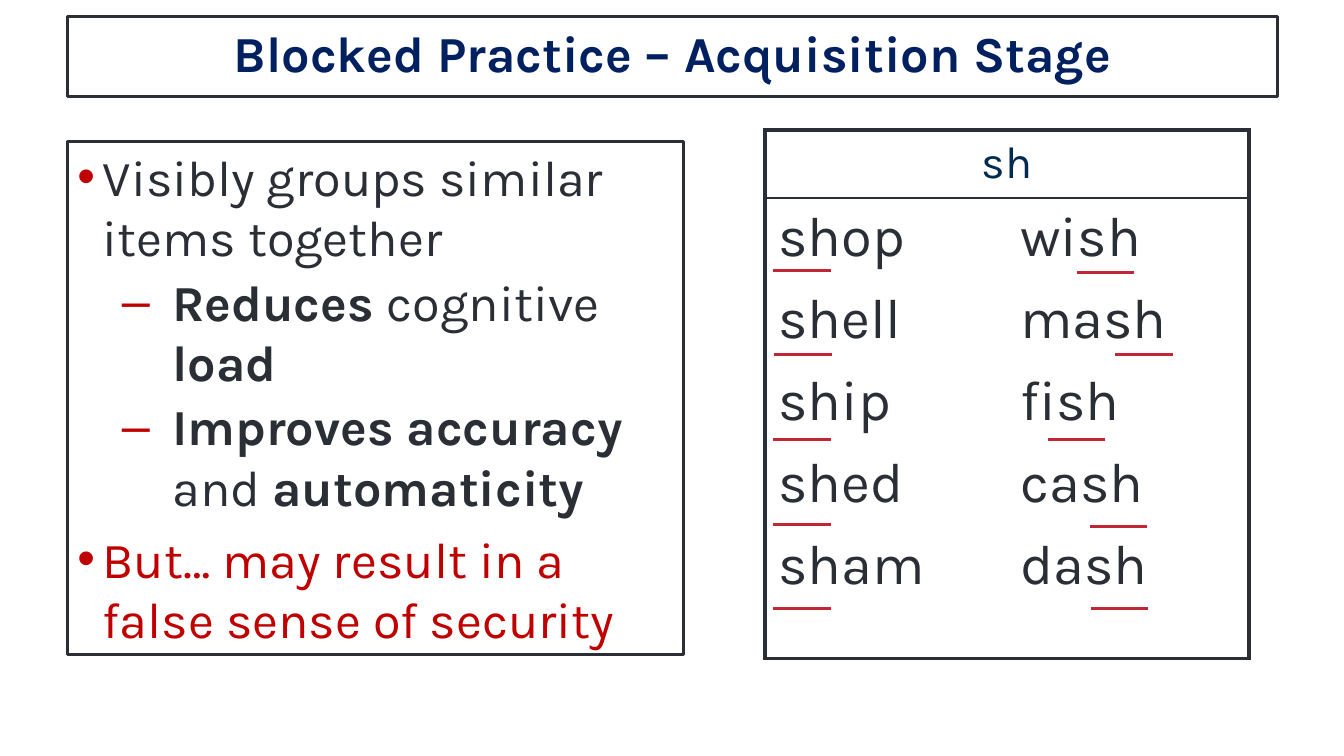
from lxml.etree import SubElement
from pptx import Presentation
from pptx.dml.color import RGBColor
from pptx.enum.shapes import MSO_CONNECTOR
from pptx.enum.text import MSO_ANCHOR, PP_ALIGN
from pptx.oxml.ns import qn
from pptx.util import Emu, Pt

THEME = {
    "font": "Karla", "bullet_font": "Arial",
    "paper": "FFFFFF", "ink": "2A2F36", "title": "002060",
    "header": "002A4E", "accent": "C00000", "underline": "C12637",
    "body_size": 36, "header_size": 32, "word_size": 40,
}
PX = 9144  # 100 px to the inch


def add_run(paragraph, text, size, color, bold=False):
    run = paragraph.add_run()
    run.text = text
    run.font.name = THEME["font"]
    run.font.size = Pt(size)
    run.font.bold = bold
    run.font.color.rgb = RGBColor.from_string(THEME[color])


def add_frame(left, top, width, height, inset_x, inset_y):
    shape = slide.shapes.add_textbox(*(Emu(n * PX) for n in (left, top, width, height)))
    shape.fill.solid()
    shape.fill.fore_color.rgb = RGBColor.from_string(THEME["paper"])
    shape.line.color.rgb = RGBColor.from_string(THEME["ink"])
    shape.line.width = Pt(2.25)
    frame = shape.text_frame
    frame.word_wrap = True
    frame.margin_left = frame.margin_right = Emu(inset_x * PX)
    frame.margin_top = frame.margin_bottom = Emu(inset_y * PX)
    return frame


presentation = Presentation()
presentation.slide_width = Emu(1333 * PX)
presentation.slide_height = Emu(750 * PX)
slide = presentation.slides.add_slide(presentation.slide_layouts[6])

# Title
title = add_frame(67, 16, 1200, 80, 13, 7)
title.vertical_anchor = MSO_ANCHOR.MIDDLE
paragraph = title.paragraphs[0]
paragraph.alignment = PP_ALIGN.CENTER
paragraph.line_spacing = 0.9
add_run(paragraph, "Blocked Practice – Acquisition Stage", THEME["body_size"], "title", True)

# Bulleted points: level, space before, colour, (text, bold) runs
points = [
    (0, 0, "ink", [("Visibly groups similar items together", False)]),
    (1, 2.7, "ink", [("Reduces ", True), ("cognitive ", False), ("load", True)]),
    (1, 2.7, "ink", [("Improves accuracy ", True), ("and ", False), ("automaticity", True)]),
    (0, 8, "accent", [("But… may result in a false sense of security", False)]),
]
bullets = [("•", 25, 25), ("‒", 94, 50)]  # mark, margin, hanging indent
body = add_frame(67, 140, 611, 509, 10, 5)
for index, (level, space, color, runs) in enumerate(points):
    paragraph = body.add_paragraph() if index else body.paragraphs[0]
    mark, margin, hanging = bullets[level]
    properties = paragraph._p.get_or_add_pPr()
    properties.set("marL", str(margin * PX))
    properties.set("indent", str(-hanging * PX))
    bullet_color = SubElement(properties, qn("a:buClr"))
    SubElement(bullet_color, qn("a:srgbClr"), val=THEME["accent"])
    SubElement(properties, qn("a:buFont"), typeface=THEME["bullet_font"])
    SubElement(properties, qn("a:buChar"), char=mark)
    paragraph.level = level
    if index:
        paragraph.space_before = Pt(space)
    for text, bold in runs:
        add_run(paragraph, text, THEME["body_size"], color, bold)

# Word table
columns = [["shop", "shell", "ship", "shed", "sham"],
           ["wish", "mash", "fish", "cash", "dash"]]
table = slide.shapes.add_table(
    2, 2, Emu(759 * PX), Emu(129 * PX), Emu(480 * PX), Emu(520 * PX)).table
table.first_row = table.horz_banding = False
table.rows[0].height = Emu(63 * PX)
table.rows[1].height = Emu(457 * PX)
table.cell(0, 0).merge(table.cell(0, 1))

for row in range(2):
    for column in range(2):
        cell = table.cell(row, column)
        cell.margin_left = cell.margin_right = Emu(13 * PX)
        cell.margin_top = cell.margin_bottom = Emu(7 * PX)
        borders = {
            "a:lnL": 3 if row == 0 or column == 0 else 0,
            "a:lnR": 3 if row == 0 or column == 1 else 0,
            "a:lnT": 3 if row == 0 else 1,
            "a:lnB": 1 if row == 0 else 3,
        }
        cell_properties = cell._tc.get_or_add_tcPr()
        for side, width in borders.items():
            border = SubElement(cell_properties, qn(side), w=str(Pt(width)))
            if width:
                fill = SubElement(border, qn("a:solidFill"))
                SubElement(fill, qn("a:srgbClr"), val=THEME["ink"])
            else:
                SubElement(border, qn("a:noFill"))
        cell.fill.solid()
        cell.fill.fore_color.rgb = RGBColor.from_string(THEME["paper"])

header = table.cell(0, 0).text_frame.paragraphs[0]
header.alignment = PP_ALIGN.CENTER
add_run(header, "sh", THEME["header_size"], "header")

for column, words in enumerate(columns):
    frame = table.cell(1, column).text_frame
    for index, word in enumerate(words):
        paragraph = frame.add_paragraph() if index else frame.paragraphs[0]
        if index:
            paragraph.space_before = Pt(12)
        add_run(paragraph, word, THEME["word_size"], "ink")

# Underlines beneath each "sh"
underlines = [(767, 268), (768, 352), (767, 436), (767, 520), (767, 604),
              (1068, 270), (1106, 352), (1039, 436), (1081, 522), (1082, 604)]
for left, top in underlines:
    underline = slide.shapes.add_connector(
        MSO_CONNECTOR.STRAIGHT, Emu(left * PX), Emu(top * PX),
        Emu((left + 57) * PX), Emu(top * PX))
    underline.line.color.rgb = RGBColor.from_string(THEME["underline"])
    underline.line.width = Pt(2.25)
    SubElement(underline._element.spPr, qn("a:effectLst"))

presentation.save("out.pptx")
